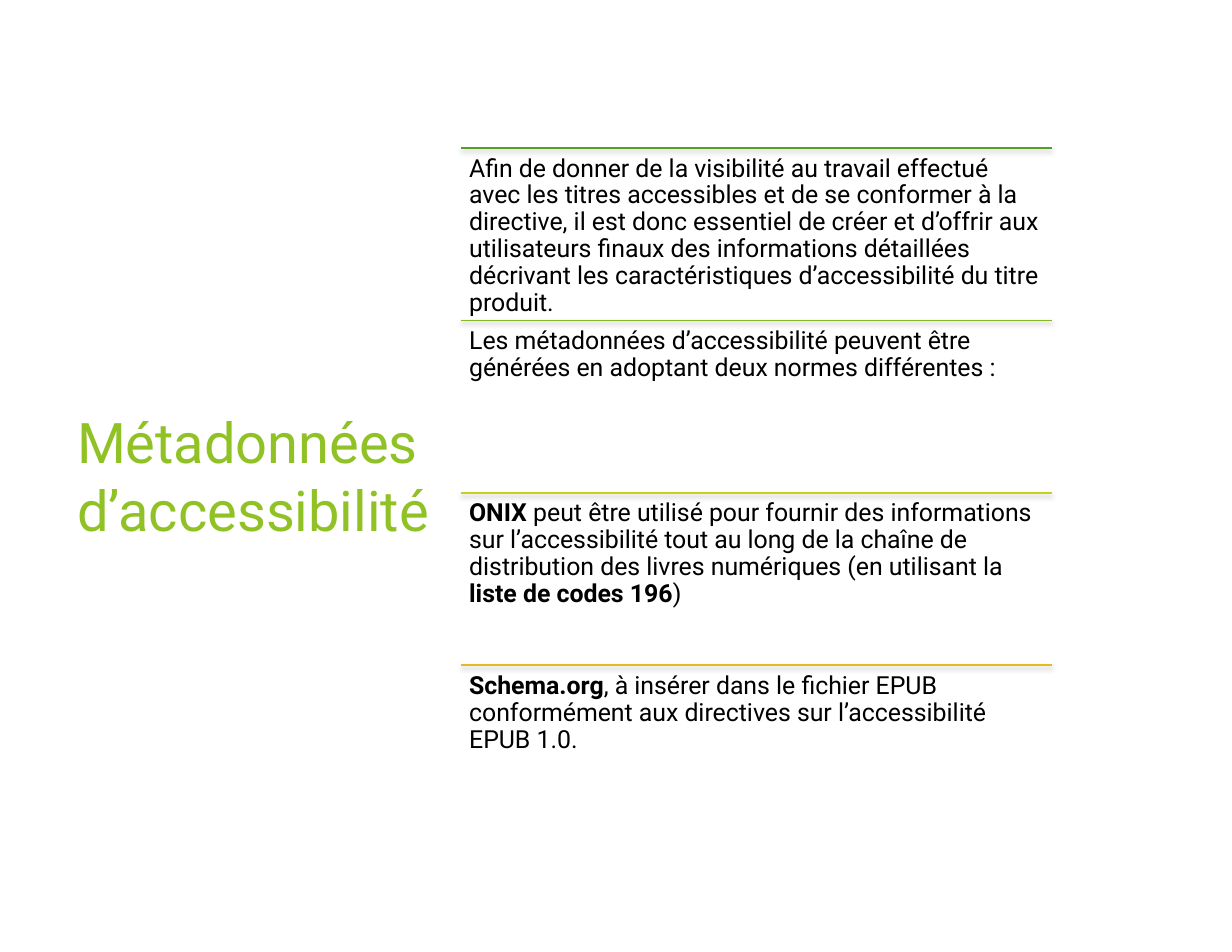
from dataclasses import dataclass

from lxml import etree
from pptx import Presentation
from pptx.dml.color import RGBColor
from pptx.enum.shapes import MSO_CONNECTOR as Connector
from pptx.enum.text import MSO_ANCHOR as Anchor
from pptx.oxml.ns import qn
from pptx.slide import Slide
from pptx.text.text import _Paragraph as Paragraph
from pptx.util import Pt

FONT = "Roboto"
BLACK = RGBColor(0x00, 0x00, 0x00)
LIME = RGBColor(0x90, 0xC2, 0x26)
GREEN = RGBColor(0x54, 0xA0, 0x21)
LEAF = RGBColor(0x86, 0xB8, 0x20)
YELLOW = RGBColor(0xC7, 0xD0, 0x1D)
GOLD = RGBColor(0xE6, 0xB9, 0x1E)

LIST_LEFT, LIST_TOP = 296.64, 95.04
LIST_WIDTH, ROW_HEIGHT = 379.44, 110.88
INSET = 5


@dataclass(frozen=True)
class Span:
    text: str
    bold: bool = False


@dataclass(frozen=True)
class Row:
    color: RGBColor
    spans: tuple[Span, ...]


ROWS = (
    Row(GREEN, (Span(
        "Afin de donner de la visibilité au travail effectué avec les titres "
        "accessibles et de se conformer à la directive, il est donc essentiel "
        "de créer et d’offrir aux utilisateurs finaux des informations "
        "détaillées décrivant les caractéristiques d’accessibilité du titre "
        "produit."),)),
    Row(LEAF, (Span(
        "Les métadonnées d’accessibilité peuvent être générées en adoptant "
        "deux normes différentes :"),)),
    Row(YELLOW, (
        Span("ONIX", bold=True),
        Span(" peut être utilisé pour fournir des informations sur "
             "l’accessibilité tout au long de la chaîne de distribution des "
             "livres numériques (en utilisant la "),
        Span("liste de codes 196", bold=True),
        Span(")"))),
    Row(GOLD, (
        Span("Schema.org", bold=True),
        Span(", à insérer dans le fichier EPUB conformément aux directives "
             "sur l’accessibilité EPUB 1.0."))),
)


def add_span(para: Paragraph, span: Span, size: float, color: RGBColor) -> None:
    run = para.add_run()
    run.text = span.text
    run.font.name = FONT
    run.font.size = Pt(size)
    run.font.bold = span.bold
    run.font.color.rgb = color


def add_rule(page: Slide, top: float, color: RGBColor) -> None:
    """Draw a horizontal line with a soft shadow below it."""
    rule = page.shapes.add_connector(
        Connector.STRAIGHT, Pt(LIST_LEFT), Pt(top),
        Pt(LIST_LEFT + LIST_WIDTH), Pt(top))
    rule.line.color.rgb = color
    rule.line.width = Pt(1)
    effects = etree.SubElement(rule._element.spPr, qn("a:effectLst"))
    shadow = etree.SubElement(
        effects, qn("a:outerShdw"), blurRad=str(Pt(3)), dist=str(Pt(2)),
        dir=str(90 * 60000), rotWithShape="0")
    tint = etree.SubElement(shadow, qn("a:srgbClr"), val=str(BLACK))
    etree.SubElement(tint, qn("a:alpha"), val="35000")


def add_row(page: Slide, top: float, row: Row) -> None:
    add_rule(page, top, row.color)
    box = page.shapes.add_textbox(
        Pt(LIST_LEFT), Pt(top), Pt(LIST_WIDTH), Pt(ROW_HEIGHT))
    frame = box.text_frame
    frame.word_wrap = True
    frame.margin_left = frame.margin_right = Pt(INSET)
    frame.margin_top = frame.margin_bottom = Pt(INSET)
    para = frame.paragraphs[0]
    para.line_spacing = 0.9
    for span in row.spans:
        add_span(para, span, 16, BLACK)


def add_title(page: Slide, text: str) -> None:
    box = page.shapes.add_textbox(Pt(42.5), Pt(123), Pt(250.5), Pt(365))
    frame = box.text_frame
    frame.word_wrap = True
    frame.vertical_anchor = Anchor.MIDDLE
    add_span(frame.paragraphs[0], Span(text), 36, LIME)


def main() -> None:
    deck = Presentation()
    deck.slide_width, deck.slide_height = Pt(792), Pt(612)
    page = deck.slides.add_slide(deck.slide_layouts[6])
    add_title(page, "Métadonnées d’accessibilité")
    for index, row in enumerate(ROWS):
        add_row(page, LIST_TOP + index * ROW_HEIGHT, row)
    deck.save("out.pptx")


if __name__ == "__main__":
    main()
